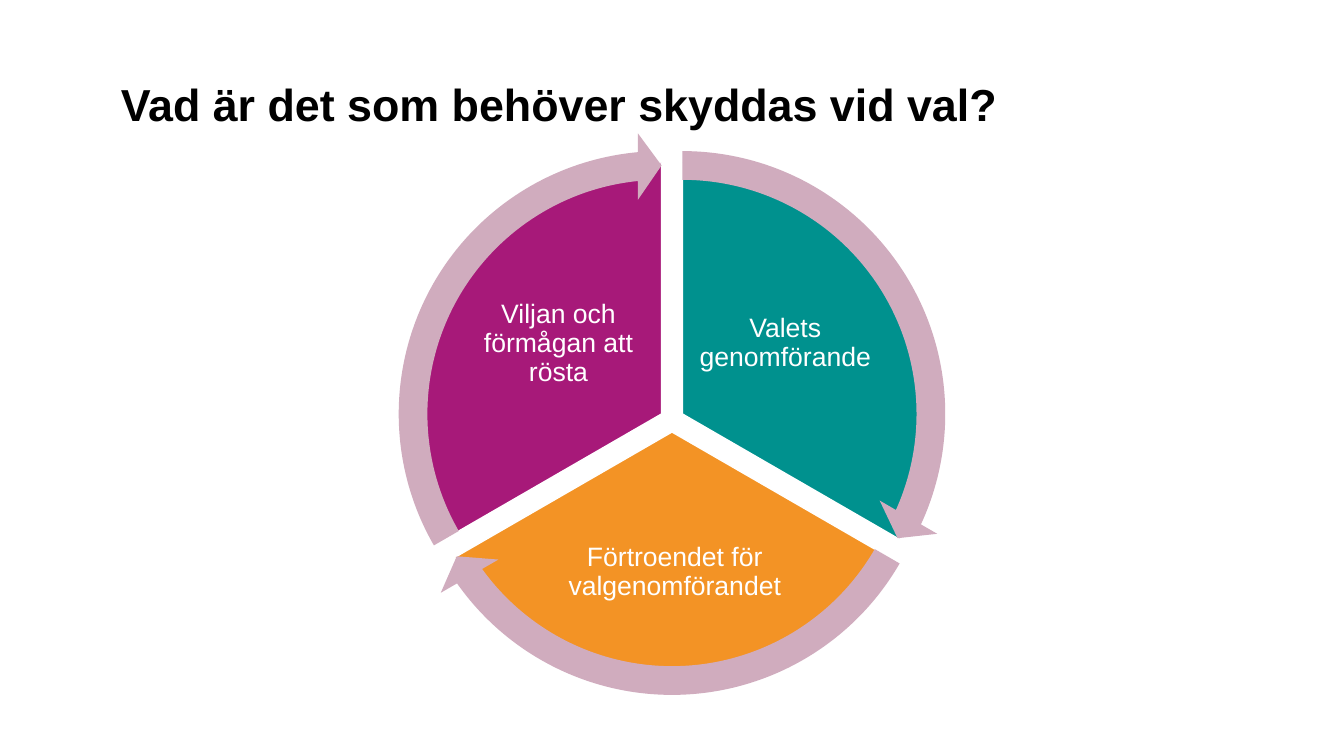
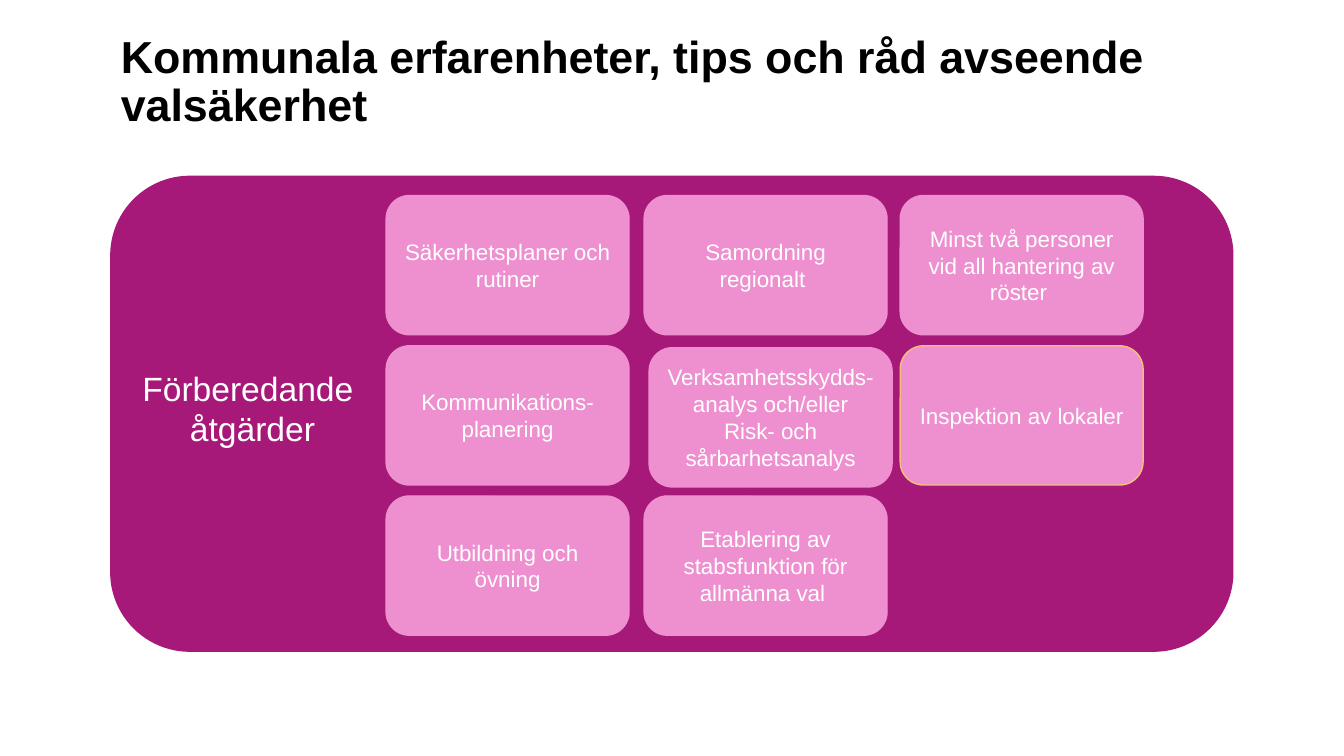
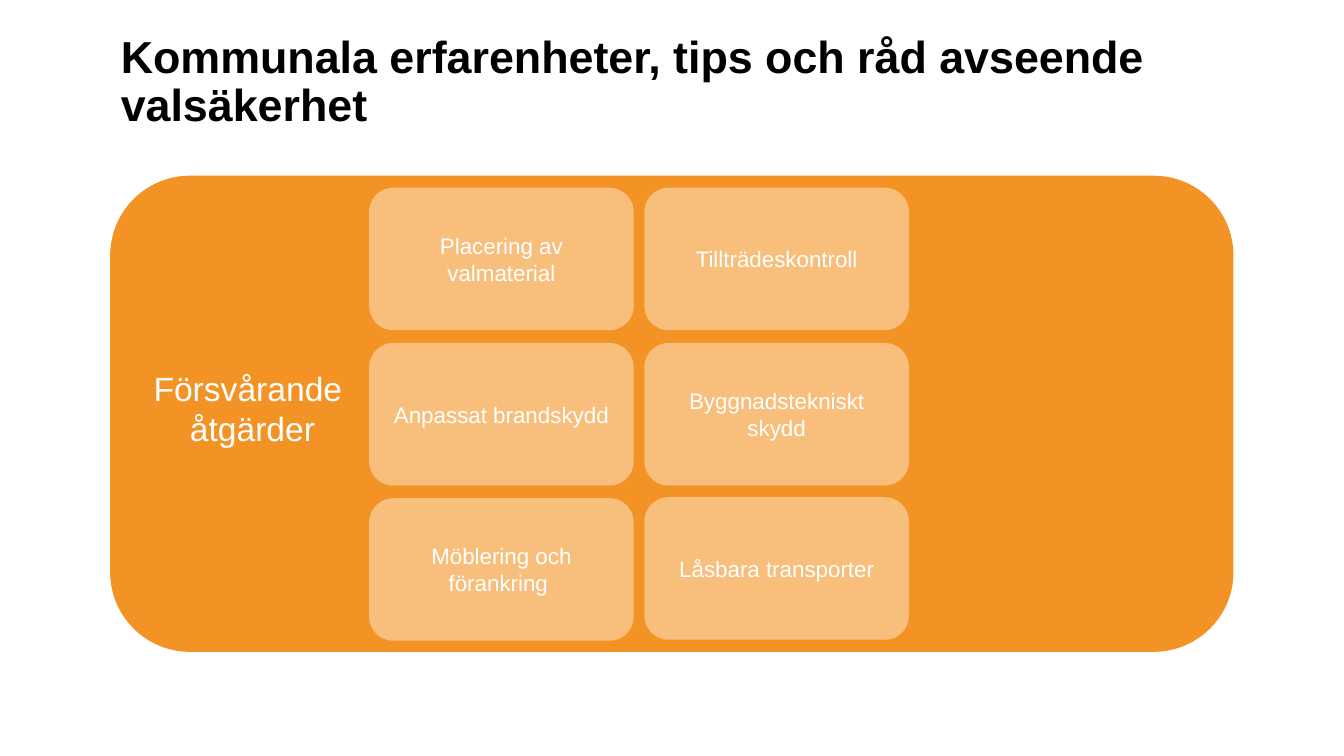
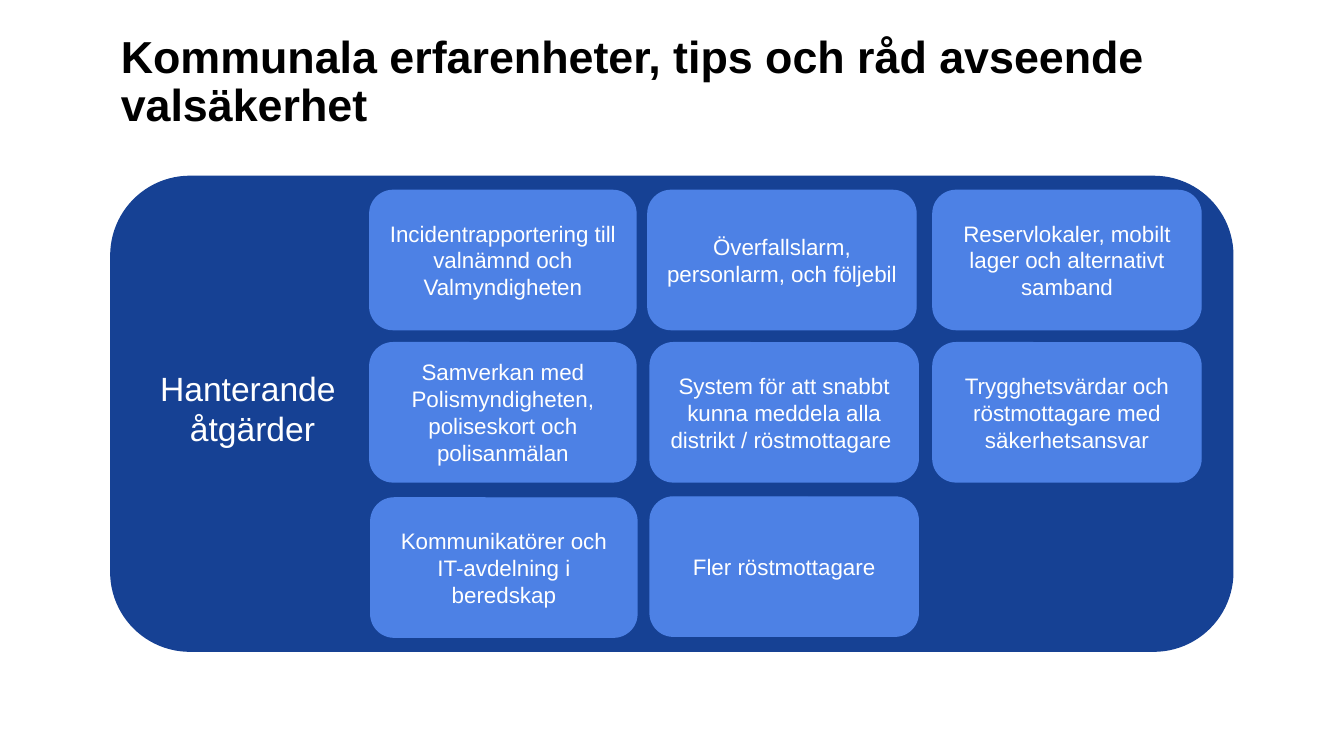
from math import cos, radians, sin

from pptx import Presentation
from pptx.dml.color import RGBColor
from pptx.enum.shapes import MSO_SHAPE as Preset
from pptx.enum.text import MSO_ANCHOR as Anchor, PP_ALIGN as Align
from pptx.util import Pt

COLORS = {
    "black": "000000", "white": "FFFFFF",
    "teal": "00918E", "orange": "F39325", "plum": "A71979", "blue": "164194",
    "pink": "EE90D0", "peach": "F8BE7C", "sky": "4D81E5", "mauve": "D0ACBE",
}
FONT = "Arial"
ANGLE_UNIT = 0.6
ARROW_TIP = 3.275


class Deck:
    def __init__(self):
        self.presentation = Presentation()
        self.presentation.slide_width = Pt(960)
        self.presentation.slide_height = Pt(540)
        self.slide = None

    def color(self, name):
        return RGBColor.from_string(COLORS[name])

    def new_slide(self, title):
        self.slide = self.presentation.slides.add_slide(self.presentation.slide_layouts[6])
        self.text((79.2, 40.3, 801.4, 56.9), [title], 32, color="black", bold=True,
                  align=Align.LEFT, anchor=Anchor.BOTTOM, spacing=0.9)

    def fill_text(self, shape, lines, size, color="white", bold=False, align=Align.CENTER,
                  anchor=Anchor.MIDDLE, spacing=None, wrap=True):
        frame = shape.text_frame
        frame.word_wrap = wrap
        frame.vertical_anchor = anchor
        for index, line in enumerate(lines):
            paragraph = frame.add_paragraph() if index else frame.paragraphs[0]
            paragraph.alignment = align
            if spacing:
                paragraph.line_spacing = spacing
            run = paragraph.add_run()
            run.text = line
            run.font.name = FONT
            run.font.size = Pt(size)
            run.font.bold = bold
            run.font.color.rgb = self.color(color)

    def text(self, box, lines, size, inset=None, **style):
        shape = self.slide.shapes.add_textbox(*map(Pt, box))
        frame = shape.text_frame
        if inset is not None:
            frame.margin_left = frame.margin_right = Pt(inset)
            frame.margin_top = frame.margin_bottom = Pt(inset)
        self.fill_text(shape, lines, size, **style)

    def shape(self, preset, box, fill, line=None, adjustments=()):
        shape = self.slide.shapes.add_shape(preset, *map(Pt, box))
        shape.shadow.inherit = False
        shape.fill.solid()
        shape.fill.fore_color.rgb = self.color(fill)
        if line:
            shape.line.color.rgb = self.color(line)
            shape.line.width = Pt(1)
        else:
            shape.line.fill.background()
        for index, value in enumerate(adjustments):
            shape.adjustments[index] = value
        return shape

    def centered(self, preset, center, size, fill, line, adjustments):
        box = (center[0] - size / 2, center[1] - size / 2, size, size)
        self.shape(preset, box, fill, line, adjustments)

    def cycle(self, wedges):
        arrows = []
        for index, (label, fill, box) in enumerate(wedges):
            start = (270 + 120 * index) % 360
            end = (start + 120) % 360
            middle = radians(start + 60)
            center = (480 + 8.6 * cos(middle), 300 + 8.6 * sin(middle))
            first, last = start * ANGLE_UNIT, end * ANGLE_UNIT
            self.centered(Preset.PIE, center, 358.6, fill, "white", (first, last))
            self.text(box, [label], 19, inset=2, spacing=0.9)
            arrows.append((center, (0.051, ARROW_TIP, last - ARROW_TIP, first, 0.059)))
        for center, adjustments in arrows:
            self.centered(Preset.CIRCULAR_ARROW, center, 402.5, "mauve", None, adjustments)

    def panel(self, fill, caption):
        self.shape(Preset.ROUNDED_RECTANGLE, (79.2, 126, 801.4, 339.1), fill, fill)
        self.text((93.6, 259.2, 173.5, 87.1), caption, 24, anchor=Anchor.TOP, wrap=False)

    def cards(self, fill, columns, tops, height, rows, nudges=None, outlines=None):
        for row, labels in enumerate(rows):
            for column, label in enumerate(labels):
                left, width = columns[column]
                across, down = (nudges or {}).get((row, column), (0, 0))
                line = (outlines or {}).get((row, column), fill)
                box = (left + across, tops[row] + down, width, height)
                card = self.shape(Preset.ROUNDED_RECTANGLE, box, fill, line)
                self.fill_text(card, [label], 16)


def main():
    deck = Deck()
    deck.new_slide("Vad är det som behöver skyddas vid val?")
    deck.cycle([
        ("Valets genomförande", "teal", (496.8, 192.2, 128.2, 106.6)),
        ("Förtroendet för valgenomförandet", "orange", (385.9, 362.2, 192.2, 93.6)),
        ("Viljan och förmågan att rösta", "plum", (334.8, 192.2, 128.2, 106.6)),
    ])

    measures_title = "Kommunala erfarenheter, tips och råd avseende valsäkerhet"

    deck.new_slide(measures_title)
    deck.panel("plum", ["Förberedande ", "åtgärder"])
    deck.cards(
        "pink", [(275.8, 173.5), (460.1, 173.5), (643, 173.5)], [139.7, 247, 354.3], 99.4,
        [["Säkerhetsplaner och rutiner", "Samordning regionalt ",
          "Minst två personer vid all hantering av röster "],
         ["Kommunikations-planering",
          "Verksamhetsskydds-analys och/eller Risk- och sårbarhetsanalys",
          "Inspektion av lokaler "],
         ["Utbildning och övning", "Etablering av stabsfunktion för allmänna val "]],
        nudges={(1, 1): (3.6, 1.4)}, outlines={(1, 2): "peach"})

    deck.new_slide(measures_title)
    deck.panel("orange", ["Försvårande ", "åtgärder"])
    deck.cards(
        "peach", [(264.2, 188), (460.8, 188)], [134.6, 245.5, 356.4], 100.8,
        [["Placering av valmaterial", "Tillträdeskontroll"],
         ["Anpassat brandskydd", "Byggnadstekniskt skydd"],
         ["Möblering och förankring ", "Låsbara transporter"]],
        nudges={(2, 1): (0, -0.7)})

    deck.new_slide(measures_title)
    deck.panel("blue", ["Hanterande ", "åtgärder"])
    deck.cards(
        "sky", [(264.2, 190.1), (464.4, 191.5), (666.4, 191.5)], [136, 244.8, 355], 99.4,
        [["Incidentrapportering till valnämnd och Valmyndigheten",
          "Överfallslarm, personlarm, och följebil",
          "Reservlokaler, mobilt lager och alternativt samband"],
         ["Samverkan med Polismyndigheten, poliseskort och polisanmälan",
          "System för att snabbt kunna meddela alla distrikt / röstmottagare ",
          "Trygghetsvärdar och röstmottagare med säkerhetsansvar"],
         ["Kommunikatörer och IT-avdelning i beredskap", "Fler röstmottagare"]],
        nudges={(0, 1): (-1.6, 0), (2, 0): (0.7, 0.7)})

    deck.presentation.save("out.pptx")


if __name__ == "__main__":
    main()
